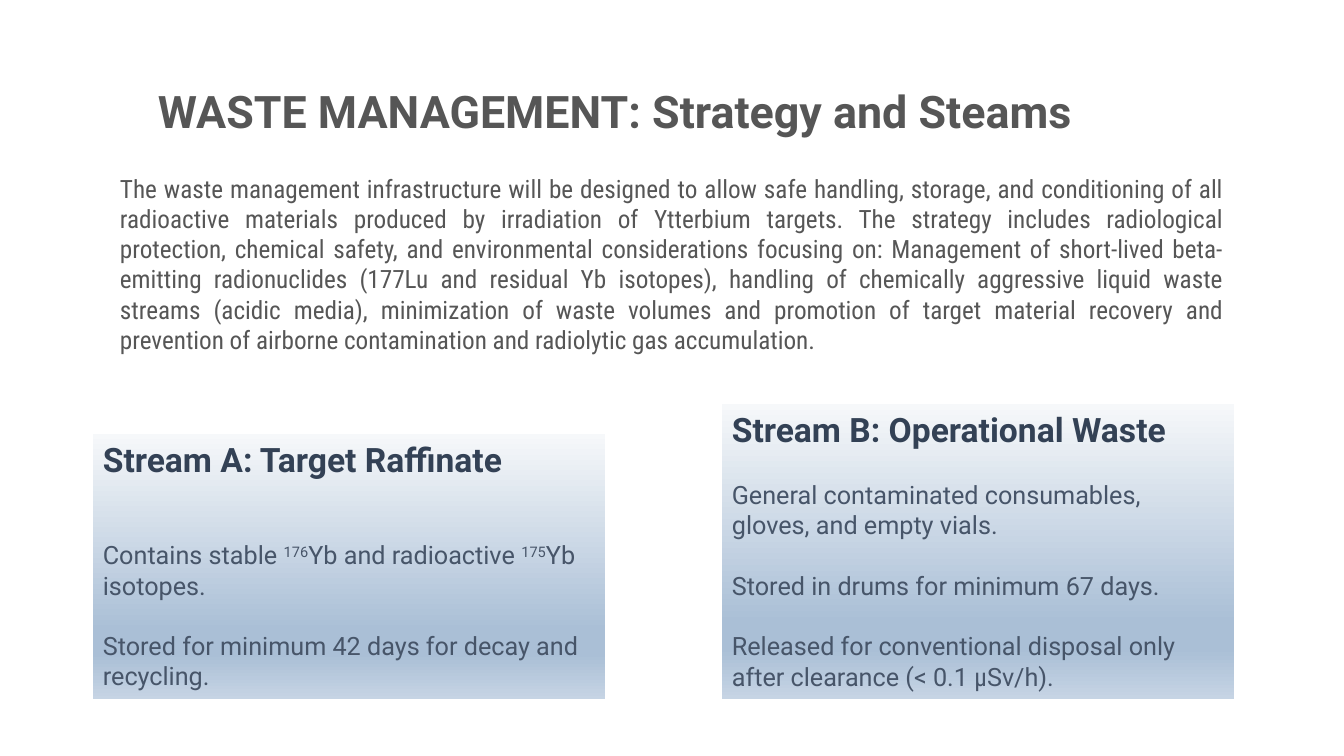
from lxml import etree
from pptx import Presentation
from pptx.dml.color import RGBColor
from pptx.enum.shapes import MSO_SHAPE
from pptx.enum.text import MSO_ANCHOR, PP_ALIGN
from pptx.oxml.ns import qn
from pptx.util import Pt

TITLE = "WASTE MANAGEMENT: Strategy and Steams"
INTRO = (
    "The waste management infrastructure will be designed to allow safe handling, "
    "storage, and conditioning of all radioactive materials produced by irradiation "
    "of Ytterbium targets. The strategy includes radiological protection, chemical "
    "safety, and environmental considerations focusing on: Management of short-lived "
    "beta-emitting radionuclides (177Lu and residual Yb isotopes), handling of "
    "chemically aggressive liquid waste streams (acidic media), minimization of waste "
    "volumes and promotion of target material recovery and prevention of airborne "
    "contamination and radiolytic gas accumulation."
)
PLAIN, SUPER, NARROW = range(3)
STREAMS = [
    ("Stream A: Target Raffinate", 93, 265, 2, [
        [("Contains stable ", PLAIN), ("176", SUPER), ("Yb and radioactive ", PLAIN),
         ("175", SUPER), ("Yb isotopes.", PLAIN)],
        [("Stored for minimum 42 days for decay and recycling.", PLAIN)],
    ]),
    ("Stream B: Operational Waste", 722, 295, 1, [
        [("General contaminated consumables, gloves, and empty vials.", PLAIN)],
        [("Stored in drums for minimum 67 days.", PLAIN)],
        [("Released for conventional disposal only after clearance (< 0.1 ", PLAIN),
         ("μ", NARROW), ("Sv/h).", PLAIN)],
    ]),
]

GREY = RGBColor(0x56, 0x56, 0x56)
NAVY = RGBColor(0x33, 0x41, 0x55)
SLATE = RGBColor(0x47, 0x55, 0x69)
PALE = RGBColor(0xF6, 0xF8, 0xFA)
BLUE = RGBColor(0xAA, 0xBF, 0xD6)
MIST = RGBColor(0xC6, 0xD4, 0xE4)
STOPS = [(0, PALE), (74, BLUE), (83, BLUE), (100, MIST)]

WIDE, COND = "Roboto", "Roboto Condensed"
TOP, MIDDLE = MSO_ANCHOR.TOP, MSO_ANCHOR.MIDDLE
LEFT, JUSTIFY = PP_ALIGN.LEFT, PP_ALIGN.JUSTIFY
RECT = MSO_SHAPE.RECTANGLE
BASE, BOX_W = 699, 512
LINE = 21.6

deck = Presentation()
deck.slide_width, deck.slide_height = 12192000, 6858000
SCALE = deck.slide_width / 1344
slide = deck.slides.add_slide(deck.slide_layouts[6])


def emu(*sizes):
    return [round(size * SCALE) for size in sizes]


def add_run(para, text, size, face, color, bold=False):
    run = para.add_run()
    run.text = text
    font = run.font
    font.size, font.name, font.bold = Pt(size), face, bold
    font.color.rgb = color
    return run


def set_frame(shape, anchor):
    frame = shape.text_frame
    frame.word_wrap = True
    frame.vertical_anchor = anchor
    return frame


def add_label(place, anchor):
    return set_frame(slide.shapes.add_textbox(*emu(*place)), anchor).paragraphs[0]


def shade(shape):
    shape.fill.gradient()
    shape.fill.gradient_angle = 270
    stops = shape._element.spPr.find(qn("a:gradFill")).find(qn("a:gsLst"))
    for old in list(stops):
        stops.remove(old)
    for spot, color in STOPS:
        stop = etree.SubElement(stops, qn("a:gs"), pos=str(spot * 1000))
        etree.SubElement(stop, qn("a:srgbClr"), val=str(color))


def add_stream(head, left, high, lines, items):
    box = slide.shapes.add_shape(RECT, *emu(left, BASE - high, BOX_W, high))
    box.shadow.inherit = False
    box.line.fill.background()
    shade(box)
    frame = set_frame(box, TOP)
    para = frame.paragraphs[0]
    para.alignment = LEFT
    add_run(para, head, 24, WIDE, NAVY, True)
    for num, item in enumerate(items):
        para = frame.add_paragraph()
        para.alignment = LEFT
        para.space_before = Pt(LINE * (1 if num else lines))
        for text, kind in item:
            face = COND if kind == NARROW else WIDE
            run = add_run(para, text, 18, face, SLATE)
            if kind == SUPER:
                run.font._element.set("baseline", "30000")


title = add_label((148, 41, 1086, 146), MIDDLE)
title.line_spacing = 0.9
title.space_after = Pt(6)
add_run(title, TITLE, 32, WIDE, GREY, True)

for stream in STREAMS:
    add_stream(*stream)

intro = add_label((110, 168, 1124, 194), TOP)
intro.alignment = JUSTIFY
add_run(intro, INTRO, 18, COND, GREY)

deck.save("out.pptx")
